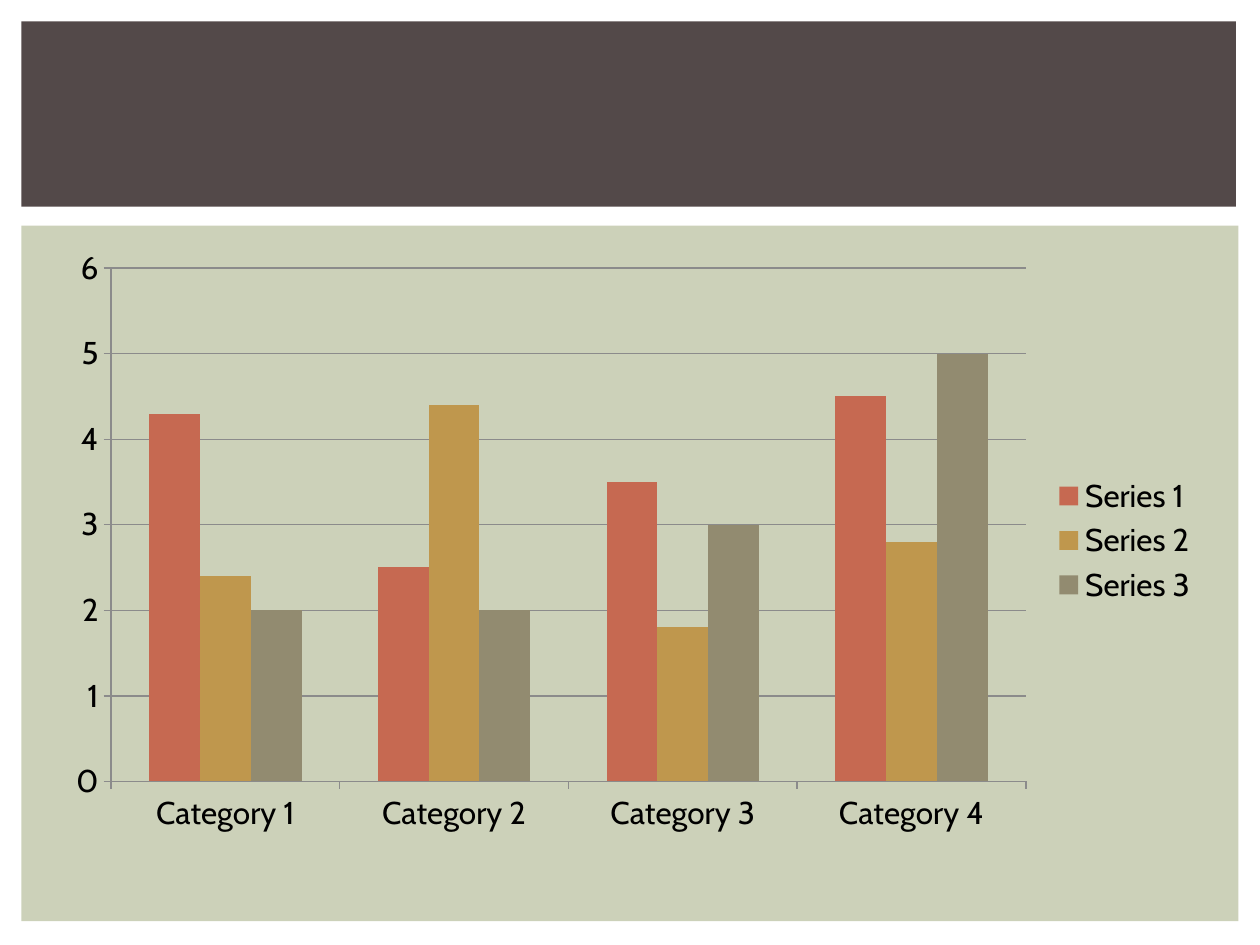
"""Build a slide with a title band and a clustered column chart on a panel."""
import pptx
import pptx.chart.data
import pptx.dml.color
import pptx.enum.chart
import pptx.enum.shapes
import pptx.util

RGB = pptx.dml.color.RGBColor
BLACK = RGB(0x00, 0x00, 0x00)
GREY = RGB(0x8B, 0x8B, 0x8B)
SAGE = RGB(0xCC, 0xD1, 0xB9)
BROWN = RGB(0x53, 0x49, 0x49)
RUST = RGB(0xC6, 0x69, 0x51)
GOLD = RGB(0xBF, 0x97, 0x4D)
OLIVE = RGB(0x92, 0x8B, 0x70)

WIDE, HIGH = 10, 7.5
EDGE = 0.17
CATS = [f"Category {n}" for n in range(1, 5)]
SERIES = [
    ("Series 1", (4.3, 2.5, 3.5, 4.5), RUST),
    ("Series 2", (2.4, 4.4, 1.8, 2.8), GOLD),
    ("Series 3", (2, 2, 3, 5), OLIVE),
]


def box(*sizes):
    return [pptx.util.Inches(size) for size in sizes]


def add_band(slide, color, *place):
    kind = pptx.enum.shapes.MSO_SHAPE.RECTANGLE
    band = slide.shapes.add_shape(kind, *box(*place))
    band.shadow.inherit = False
    band.fill.solid()
    band.fill.fore_color.rgb = color
    band.line.fill.background()


def style_line(line):
    line.color.rgb = GREY
    line.width = pptx.util.Pt(0.75)


def add_columns(slide, *place):
    enum = pptx.enum.chart
    data = pptx.chart.data.CategoryChartData()
    data.categories = CATS
    for name, vals, _ in SERIES:
        data.add_series(name, vals)
    kind = enum.XL_CHART_TYPE.COLUMN_CLUSTERED
    chart = slide.shapes.add_chart(kind, *box(*place), data).chart
    chart.has_title = False
    chart.font.name = "Cabin"
    chart.font.size = pptx.util.Pt(18)
    chart.font.color.rgb = BLACK
    chart.has_legend = True
    chart.legend.position = enum.XL_LEGEND_POSITION.RIGHT
    chart.legend.include_in_layout = False

    plot = chart.plots[0]
    plot.gap_width = 150
    plot.overlap = 0
    plot.vary_by_categories = False
    for bar, (_, _, color) in zip(plot.series, SERIES):
        bar.invert_if_negative = False
        bar.format.fill.solid()
        bar.format.fill.fore_color.rgb = color

    for axis in (chart.category_axis, chart.value_axis):
        axis.major_tick_mark = enum.XL_TICK_MARK.OUTSIDE
        axis.minor_tick_mark = enum.XL_TICK_MARK.NONE
        style_line(axis.format.line)
    scale = chart.value_axis
    scale.minimum_scale, scale.maximum_scale, scale.major_unit = 0, 6, 1
    scale.has_major_gridlines = True
    style_line(scale.major_gridlines.format.line)


def main():
    deck = pptx.Presentation()
    deck.slide_width, deck.slide_height = box(WIDE, HIGH)
    slide = deck.slides.add_slide(deck.slide_layouts[6])
    add_band(slide, SAGE, EDGE, 1.79, WIDE - 2 * EDGE, 5.52)
    add_band(slide, BROWN, EDGE, EDGE, 9.64, 1.47)
    add_columns(slide, 0.42, 1.88, 9.19, 4.82)
    deck.save("out.pptx")


if __name__ == "__main__":
    main()
